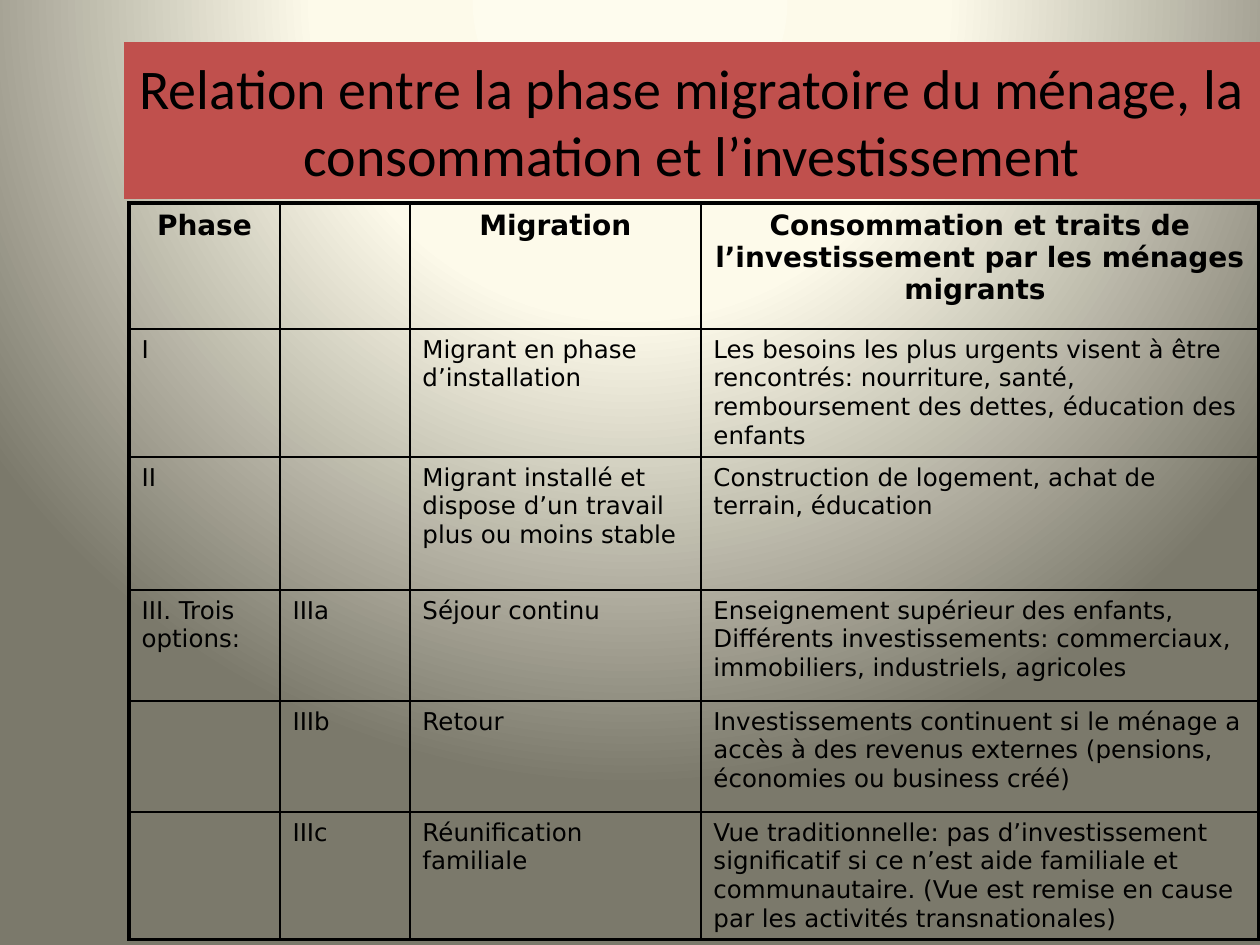
from lxml.etree import SubElement
from pptx import Presentation
from pptx.dml.color import RGBColor
from pptx.enum.text import MSO_ANCHOR, MSO_AUTO_SIZE, PP_ALIGN
from pptx.oxml import parse_xml
from pptx.oxml.ns import nsdecls, qn
from pptx.util import Pt

PX = 914400 // 126
BLACK = RGBColor(0x00, 0x00, 0x00)
RED = RGBColor(0xC0, 0x50, 0x4D)
BACKGROUND_STOPS = [
    (0, RGBColor(0xFE, 0xFC, 0xEE)),
    (40, RGBColor(0xFD, 0xFA, 0xEA)),
    (100, RGBColor(0x7B, 0x79, 0x6B)),
]
THIN, THICK = Pt(1), Pt(2.25)

COLUMN_WIDTHS = [151, 130, 291, 558]
ROW_HEIGHTS = [126, 128, 133, 111, 111, 127]
ROWS = [
    ["Phase", "", "Migration",
     "Consommation et traits de l’investissement par les ménages migrants "],
    ["I", "", "Migrant en phase d’installation",
     "Les besoins les plus urgents visent à être rencontrés: nourriture, santé, "
     "remboursement des dettes, éducation des enfants"],
    ["II", "", "Migrant installé et dispose d’un travail plus ou moins stable",
     "Construction de logement, achat de terrain, éducation"],
    ["III. Trois options:", "IIIa", "Séjour continu",
     "Enseignement supérieur des enfants, Différents investissements: "
     "commerciaux, immobiliers, industriels, agricoles"],
    ["", "IIIb", "Retour",
     "Investissements continuent si le ménage a accès à des revenus externes "
     "(pensions, économies ou business créé)"],
    ["", "IIIc", "Réunification familiale",
     "Vue traditionnelle: pas d’investissement significatif si ce n’est aide "
     "familiale et communautaire. (Vue est remise en cause par les activités "
     "transnationales)"],
]


def add_run(paragraph, text, font_name, size, bold=False):
    run = paragraph.add_run()
    run.text = text
    run.font.name = font_name
    run.font.size = Pt(size)
    run.font.bold = bold
    run.font.color.rgb = BLACK


def add_border(cell, side, width):
    """Draw one side (L, R, T or B) of a cell."""
    properties = cell._tc.get_or_add_tcPr()
    line = SubElement(properties, qn(f"a:ln{side}"), w=str(width))
    fill = SubElement(line, qn("a:solidFill"))
    SubElement(fill, qn("a:srgbClr"), val=str(BLACK))


presentation = Presentation()
presentation.slide_width = 1260 * PX
presentation.slide_height = 945 * PX
slide = presentation.slides.add_slide(presentation.slide_layouts[5])

# Background: circular gradient centred above the slide
stops = "".join(
    f'<a:gs pos="{position * 1000}"><a:srgbClr val="{color}"/></a:gs>'
    for position, color in BACKGROUND_STOPS
)
slide.element.cSld.insert(0, parse_xml(
    f'<p:bg {nsdecls("p", "a")}><p:bgPr><a:gradFill rotWithShape="1">'
    f'<a:gsLst>{stops}</a:gsLst><a:path path="circle">'
    '<a:fillToRect l="50000" t="-80000" r="50000" b="180000"/></a:path>'
    '</a:gradFill><a:effectLst/></p:bgPr></p:bg>'
))

# Title
title = slide.shapes.title
title.left, title.top = 124 * PX, 42 * PX
title.width, title.height = 1136 * PX, 157 * PX
title.fill.solid()
title.fill.fore_color.rgb = RED
title.text_frame.auto_size = MSO_AUTO_SIZE.NONE
title.text_frame.word_wrap = True
title.text_frame.vertical_anchor = MSO_ANCHOR.MIDDLE
title_paragraph = title.text_frame.paragraphs[0]
title_paragraph.alignment = PP_ALIGN.CENTER
add_run(title_paragraph,
        "Relation entre la phase migratoire du ménage, la consommation "
        "et l’investissement", "Calibri", 32)

# Table of migration phases
table = slide.shapes.add_table(
    len(ROWS), len(COLUMN_WIDTHS), 129 * PX, 203 * PX,
    sum(COLUMN_WIDTHS) * PX, sum(ROW_HEIGHTS) * PX,
).table
table.first_row = False
table.horz_banding = False
for column, width in zip(table.columns, COLUMN_WIDTHS):
    column.width = width * PX
for row, height in zip(table.rows, ROW_HEIGHTS):
    row.height = height * PX

last_row, last_column = len(ROWS) - 1, len(COLUMN_WIDTHS) - 1
for row_index, texts in enumerate(ROWS):
    is_header = row_index == 0
    for column_index, text in enumerate(texts):
        cell = table.cell(row_index, column_index)
        outer_sides = {
            "L": column_index == 0,
            "R": column_index == last_column,
            "T": is_header,
            "B": row_index == last_row,
        }
        for side, is_outer in outer_sides.items():
            add_border(cell, side, THICK if is_outer else THIN)
        cell.fill.background()
        if text:
            paragraph = cell.text_frame.paragraphs[0]
            paragraph.alignment = PP_ALIGN.CENTER if is_header else PP_ALIGN.LEFT
            add_run(paragraph, text, "DejaVu Sans", 16 if is_header else 14, is_header)

presentation.save("out.pptx")
